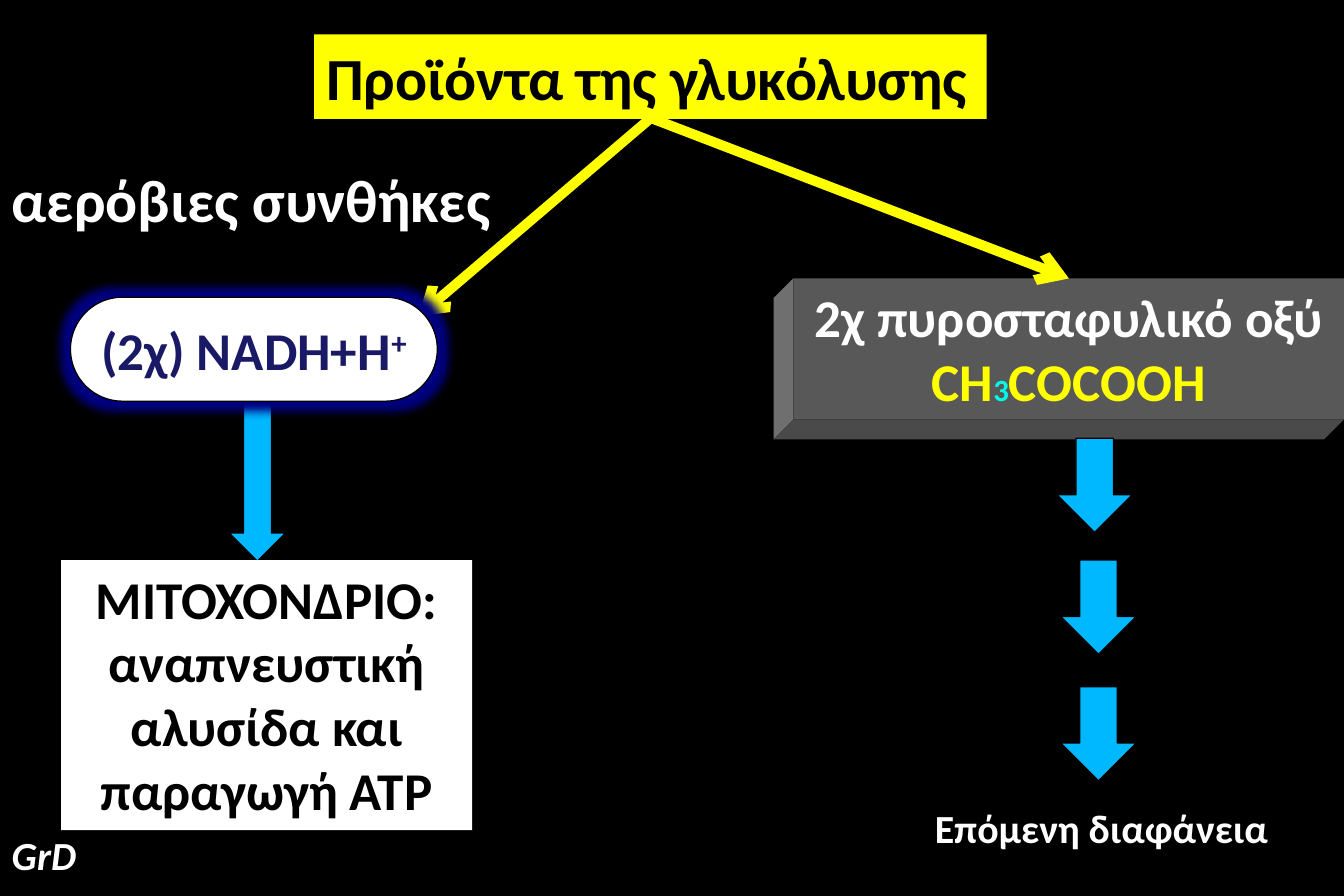
from lxml.etree import SubElement
from pptx import Presentation
from pptx.dml.color import RGBColor
from pptx.enum.shapes import MSO_CONNECTOR, MSO_SHAPE
from pptx.enum.text import MSO_ANCHOR, MSO_AUTO_SIZE, PP_ALIGN
from pptx.oxml.ns import qn
from pptx.util import Cm, Pt

FONT = "Calibri"
COLORS = {
    "black": "000000",
    "white": "FFFFFF",
    "yellow": "FFFF00",
    "cyan": "00FEE7",
    "blue": "00B8FF",
    "navy": "191966",
    "glow": "000080",
    "face": "585858",
    "side": "6F6F6F",
    "base": "4A4A4A",
}


def rgb(name):
    return RGBColor.from_string(COLORS[name])


def fill_shape(shape, fill, outlined=False):
    shape.shadow.inherit = False
    shape.fill.solid()
    shape.fill.fore_color.rgb = rgb(fill)
    if outlined:
        shape.line.color.rgb = rgb("black")
        shape.line.width = Pt(0.75)
    else:
        shape.line.fill.background()


def write_text(shape, paragraphs, size, align=PP_ALIGN.LEFT, wrap=False,
               anchor=MSO_ANCHOR.TOP, italic=False):
    """Each paragraph is a list of (text, colour, baseline percent)."""
    frame = shape.text_frame
    frame.word_wrap = wrap
    frame.auto_size = MSO_AUTO_SIZE.NONE
    frame.vertical_anchor = anchor
    frame.text = "\n".join("" for _ in paragraphs)
    for para, spans in zip(frame.paragraphs, paragraphs):
        para.alignment = align
        for text, color, baseline in spans:
            span = para.add_run()
            span.text = text
            span.font.name = FONT
            span.font.size = Pt(size)
            span.font.bold = True
            span.font.italic = italic
            span.font.color.rgb = rgb(color)
            if baseline:
                span.font._element.set("baseline", str(baseline * 1000))


def add_title(slide, text, left, top, width, height):
    title = slide.shapes.title
    title.left, title.top = Cm(left), Cm(top)
    title.width, title.height = Cm(width), Cm(height)
    title.fill.solid()
    title.fill.fore_color.rgb = rgb("yellow")
    write_text(title, [[(text, "black", 0)]], 36)


def add_label(slide, text, left, top, width, height, size, italic=False):
    label = slide.shapes.add_textbox(Cm(left), Cm(top), Cm(width), Cm(height))
    write_text(label, [[(text, "white", 0)]], size, italic=italic)


def add_box(slide, kind, left, top, width, height, fill, outlined=False):
    box = slide.shapes.add_shape(kind, Cm(left), Cm(top), Cm(width), Cm(height))
    fill_shape(box, fill, outlined)
    return box


def add_polygon(slide, points, fill):
    corners = [(Cm(x), Cm(y)) for x, y in points]
    builder = slide.shapes.build_freeform(*corners[0])
    builder.add_line_segments(corners[1:])
    fill_shape(builder.convert_to_shape(), fill)


def add_block(slide, left, top, width, height, depth):
    """Box with a visible left side and underside; returns its front face."""
    right, bottom = left + width, top + height
    inner, outer = (left, bottom), (left - depth, bottom + depth)
    add_polygon(slide, [(left, top), (left - depth, top + depth), outer, inner], "side")
    add_polygon(slide, [inner, outer, (right - depth, bottom + depth), (right, bottom)], "base")
    return add_box(slide, MSO_SHAPE.RECTANGLE, left, top, width, height, "face")


def add_arrow(slide, start, end):
    arrow = slide.shapes.add_connector(
        MSO_CONNECTOR.STRAIGHT, *(Cm(value) for value in start + end))
    arrow.line.color.rgb = rgb("yellow")
    arrow.line.width = Pt(6)
    SubElement(arrow.line._get_or_add_ln(), qn("a:tailEnd"), type="arrow")
    SubElement(arrow._element.spPr, qn("a:effectLst"))


def add_glow(shape, color, radius):
    effects = shape._element.spPr.find(qn("a:effectLst"))
    glow = SubElement(effects, qn("a:glow"), rad=str(Pt(radius)))
    SubElement(glow, qn("a:srgbClr"), val=COLORS[color])


def main():
    deck = Presentation()
    deck.slide_width, deck.slide_height = Cm(28.58), Cm(19.05)
    slide = deck.slides.add_slide(deck.slide_layouts[5])
    slide.background.fill.solid()
    slide.background.fill.fore_color.rgb = rgb("black")

    pyruvate = add_block(slide, 16.87, 5.92, 11.71, 3, depth=0.42)
    write_text(pyruvate, [
        [("2χ πυροσταφυλικό οξύ", "white", 0)],
        [("CH", "yellow", 0), ("3", "cyan", -1), ("COCOOH", "yellow", 0)],
    ], 32, PP_ALIGN.CENTER, wrap=True)

    add_title(slide, "Προϊόντα της γλυκόλυσης", 6.68, 0.73, 14.3, 1.8)
    add_label(slide, "αερόβιες συνθήκες", 0, 3.33, 10.8, 1.8, 36)
    for end in ((8.89, 6.73), (22.73, 5.92)):
        add_arrow(slide, (13.84, 2.51), end)

    for left, top, width, height in (
        (4.88, 8.53, 1.19, 3.4),
        (22.48, 9.32, 1.6, 2),
        (22.56, 11.91, 1.6, 2),
        (22.56, 14.6, 1.6, 2),
    ):
        add_box(slide, MSO_SHAPE.DOWN_ARROW, left, top, width, height, "blue", True)

    nadh = add_box(slide, MSO_SHAPE.ROUNDED_RECTANGLE, 1.5, 6.32, 7.8, 2.21, "white", True)
    nadh.adjustments[0] = 0.5
    add_glow(nadh, "glow", 11)
    write_text(nadh, [[("(2χ) NADH+H", "navy", 0), ("+", "navy", 30)]], 32,
               PP_ALIGN.CENTER, wrap=True, anchor=MSO_ANCHOR.MIDDLE)

    mitochondrion = add_box(slide, MSO_SHAPE.RECTANGLE, 1.3, 11.91, 8.74, 5.74, "white")
    write_text(mitochondrion,
               [[("ΜΙΤΟΧΟΝΔΡΙΟ: αναπνευστική αλυσίδα και παραγωγή ΑΤΡ", "black", 0)]],
               32, PP_ALIGN.CENTER, wrap=True)

    add_label(slide, "GrD", 0, 17.53, 1.88, 1.27, 24, italic=True)
    add_label(slide, "Επόμενη διαφάνεια", 19.63, 16.97, 7.65, 1.27, 24)
    deck.save("out.pptx")


if __name__ == "__main__":
    main()
